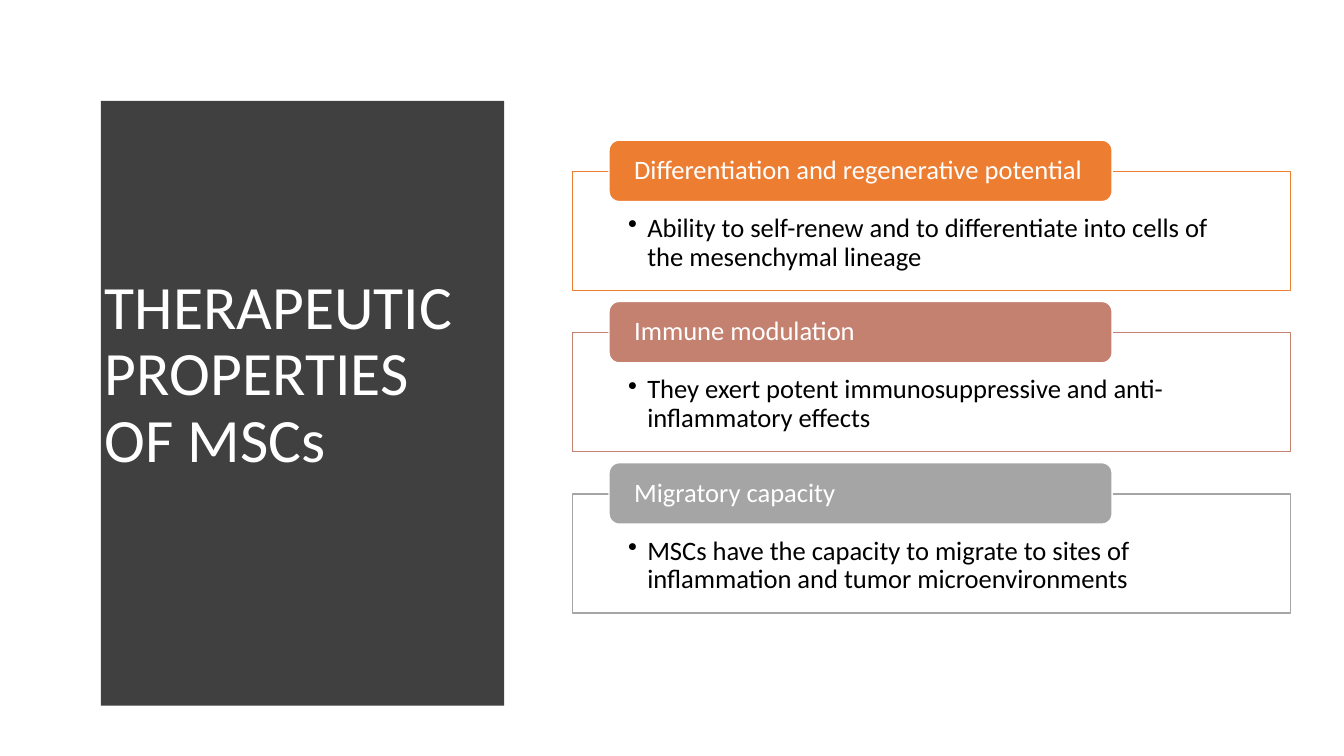
from lxml import etree
from pptx import Presentation
from pptx.dml.color import RGBColor
from pptx.enum.shapes import MSO_SHAPE
from pptx.enum.text import MSO_ANCHOR, PP_ALIGN
from pptx.oxml.ns import qn
from pptx.util import Inches, Pt

RECT, ROUND = MSO_SHAPE.RECTANGLE, MSO_SHAPE.ROUNDED_RECTANGLE
TOP, MIDDLE = MSO_ANCHOR.TOP, MSO_ANCHOR.MIDDLE
LEFT = PP_ALIGN.LEFT

THEME = {
    "font": "Calibri", "title": Pt(44), "text": Pt(19),
    "white": RGBColor.from_string("FFFFFF"),
    "black": RGBColor.from_string("000000"),
    "dark": RGBColor.from_string("404040"),
    "accents": [RGBColor.from_string(c) for c in ("ED7D31", "C48170", "A5A5A5")],
}
CARDS = [
    ("Differentiation and regenerative potential",
     "Ability to self-renew and to differentiate into cells of the mesenchymal lineage"),
    ("Immune modulation",
     "They exert potent immunosuppressive and anti-inflammatory effects"),
    ("Migratory capacity",
     "MSCs have the capacity to migrate to sites of inflammation and tumor microenvironments"),
]


def style(para, size, color):
    para.alignment = LEFT
    para.line_spacing = 0.9
    para.font.name = THEME["font"]
    para.font.size = size
    para.font.color.rgb = color


def add_box(kind, place, fill, line, text, ink, insets, anchor):
    """Add a filled, outlined shape with text and return its paragraph."""
    box = slide.shapes.add_shape(kind, *[Inches(n) for n in place])
    box.shadow.inherit = False
    box.fill.solid()
    box.fill.fore_color.rgb = fill
    box.line.color.rgb = line
    box.line.width = Pt(1)
    frame = box.text_frame
    frame.word_wrap = True
    frame.vertical_anchor = anchor
    side, top, bottom = insets
    frame.margin_left = frame.margin_right = Inches(side)
    frame.margin_top, frame.margin_bottom = Inches(top), Inches(bottom)
    para = frame.paragraphs[0]
    para.text = text
    style(para, THEME["text"], ink)
    return para


deck = Presentation()
deck.slide_width, deck.slide_height = Inches(13.33), Inches(7.5)
slide = deck.slides.add_slide(deck.slide_layouts[5])

# Dark panel: the right edge bulges as a parabola
left, top, bottom = 0.53, 0.52, 6.96
steps = 40
edge = []
for i in range(steps + 1):
    y = top + (bottom - top) * i / steps
    x = 5.32 - 0.24 * ((y - 3.7) / 3.22) ** 2
    edge.append((x, y))
pen = slide.shapes.build_freeform(left, top, scale=Inches(1))
pen.add_line_segments(edge + [(left, bottom)], close=True)
panel = pen.convert_to_shape()
panel.shadow.inherit = False
panel.fill.solid()
panel.fill.fore_color.rgb = THEME["dark"]
panel.line.fill.background()

# Title, in front of the panel
title = slide.shapes.title
title.left, title.top = Inches(0.94), Inches(1.11)
title.width, title.height = Inches(3.74), Inches(5.24)
title.text_frame.word_wrap = True
title.text_frame.vertical_anchor = MIDDLE
title.text_frame.text = "THERAPEUTIC PROPERTIES OF MSCs"
style(title.text_frame.paragraphs[0], THEME["title"], THEME["white"])
panel._element.addnext(title._element)

# Cards: an outlined box with a label over its top edge
for i, (label, detail) in enumerate(CARDS):
    accent = THEME["accents"][i]
    y = 1.7 + 1.6 * i
    para = add_box(RECT, (5.68, y, 7.12, 1.18), THEME["white"], accent,
                   detail, THEME["black"], (0.55, 0.43, 0.15), TOP)
    para.level = 1
    props = para._p.get_or_add_pPr()
    props.set("marL", str(Inches(0.19)))
    props.set("indent", str(-Inches(0.19)))
    etree.SubElement(props, qn("a:buChar")).set("char", "•")
    add_box(ROUND, (6.04, y - 0.31, 4.99, 0.61), accent, THEME["white"],
            label, THEME["white"], (0.22, 0, 0), MIDDLE)

# buChar must come before the paragraph's default run properties
for props in slide.shapes._spTree.iter(qn("a:pPr")):
    base = props.find(qn("a:defRPr"))
    if base is not None:
        props.append(base)

deck.save("out.pptx")
